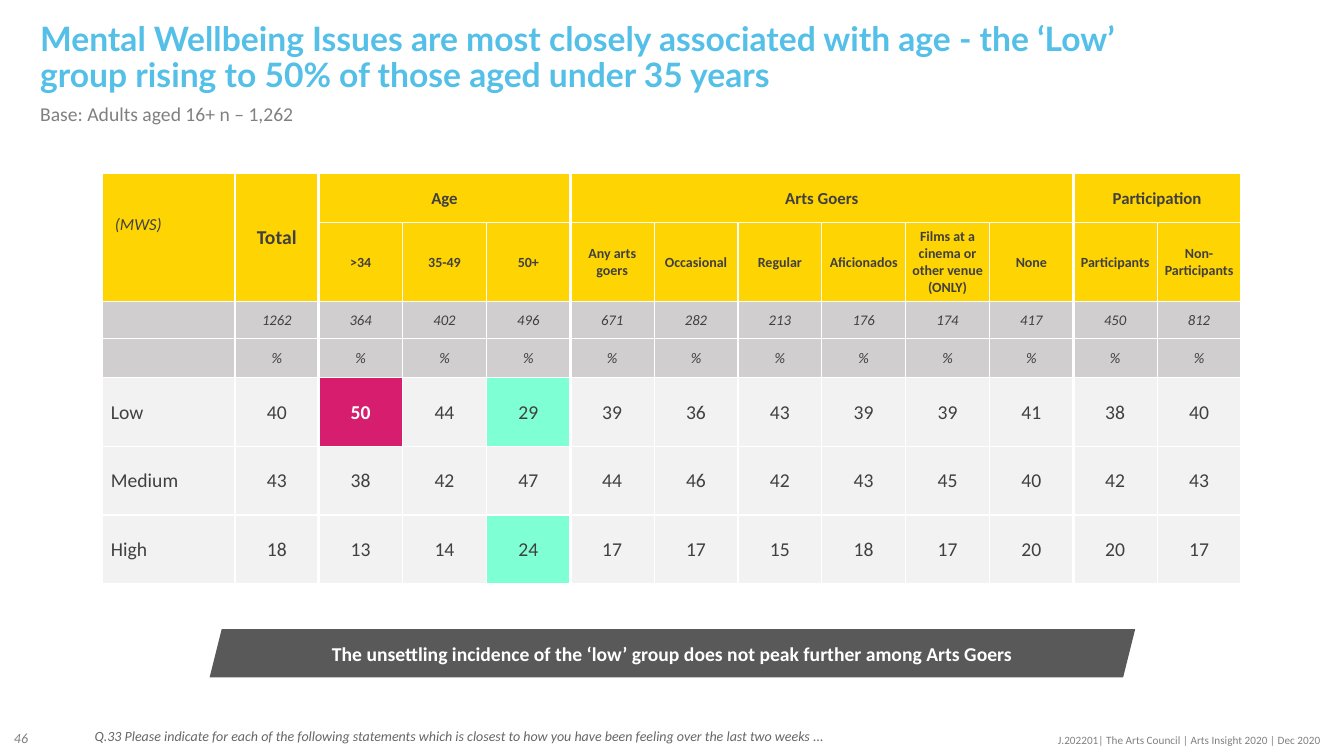
from dataclasses import dataclass, replace
from typing import NamedTuple

from lxml import etree
from pptx import Presentation
from pptx import util as u
from pptx.dml.color import RGBColor
from pptx.enum import shapes, text
from pptx.oxml import ns

SLIDE_WIDTH, SLIDE_HEIGHT = u.Inches(13.33), u.Inches(7.5)

WHITE = RGBColor(0xFF, 0xFF, 0xFF)
SKY = RGBColor(0x54, 0xC0, 0xE8)
GREY = RGBColor(0x80, 0x80, 0x80)
QUESTION_GREY = RGBColor(0x66, 0x66, 0x66)
BANNER_GREY = RGBColor(0x59, 0x59, 0x59)
INK = RGBColor(0x40, 0x40, 0x40)
YELLOW = RGBColor(0xFE, 0xD4, 0x02)
BASE_GREY = RGBColor(0xD0, 0xCE, 0xCE)
PALE = RGBColor(0xF2, 0xF2, 0xF2)
PINK = RGBColor(0xD6, 0x1D, 0x6E)
MINT = RGBColor(0x7F, 0xFF, 0xD4)

LEFT, CENTRE, RIGHT = text.PP_ALIGN.LEFT, text.PP_ALIGN.CENTER, text.PP_ALIGN.RIGHT
TOP, MIDDLE = text.MSO_ANCHOR.TOP, text.MSO_ANCHOR.MIDDLE


def across(percent: float) -> int:
    return round(SLIDE_WIDTH * percent / 100)


def down(percent: float) -> int:
    return round(SLIDE_HEIGHT * percent / 100)


class Area(NamedTuple):
    """A rectangle in percent of the slide's width and height."""
    left: float
    top: float
    width: float
    height: float

    def emu(self) -> tuple[int, int, int, int]:
        return across(self.left), down(self.top), across(self.width), down(self.height)


@dataclass(frozen=True)
class Style:
    size: float
    color: RGBColor = INK
    bold: bool = False
    italic: bool = False
    name: str = "Calibri"
    align: text.PP_ALIGN = LEFT
    line_spacing: float = 1.0


@dataclass(frozen=True)
class Caption:
    wording: str
    area: Area
    style: Style
    anchor: text.MSO_ANCHOR = TOP


@dataclass(frozen=True)
class Band:
    """One table row: height in percent of the slide, fill and lettering."""
    height: float
    fill: RGBColor
    style: Style
    cells: tuple[str, ...]


CAPTIONS = [
    Caption("46", Area(0.3, 94.93, 4.35, 5.33), Style(10, GREY, italic=True), MIDDLE),
    Caption("J.202201| The Arts Council | Arts Insight 2020 | Dec 2020",
            Area(77.27, 96.4, 21.76, 4.93), Style(8, GREY, align=RIGHT)),
    Caption("Base: Adults aged 16+ n – 1,262", Area(2.25, 13.2, 47.79, 4.67),
            Style(14, GREY, line_spacing=0.9)),
    Caption("Mental Wellbeing Issues are most closely associated with age - the ‘Low’ "
            "group rising to 50% of those aged under 35 years",
            Area(2.25, 2.27, 85.67, 5.47),
            Style(24, SKY, bold=True, name="Lato", line_spacing=0.9)),
    Caption("Q.33 Please indicate for each of the following statements which is closest "
            "to how you have been feeling over the last two weeks ...",
            Area(6.3, 95.87, 57.76, 4.13),
            Style(10, QUESTION_GREY, italic=True, line_spacing=0.9)),
]
BANNER = Caption("The unsettling incidence of the ‘low’ group does not peak further among Arts Goers",
                 Area(15.6, 83.2, 68.87, 6.4), Style(14, WHITE, bold=True, align=CENTRE), MIDDLE)

GROUP = Style(12, bold=True, align=CENTRE)
SEGMENT = replace(GROUP, size=10)
SAMPLE = Style(10.5, italic=True, align=CENTRE)
SCORE = Style(14, align=CENTRE)

BANDS = [
    Band(6.53, YELLOW, GROUP, ("(MWS)", "Total", "Age", "", "", "Arts Goers", "", "", "", "", "",
                               "Participation", "")),
    Band(10.4, YELLOW, SEGMENT, ("", "", ">34", "35-49", "50+", "Any arts goers", "Occasional",
                                 "Regular", "Aficionados",
                                 "Films at a cinema or other venue (ONLY)", "None",
                                 "Participants", "Non-Participants")),
    Band(4.93, BASE_GREY, SAMPLE, ("", "1262", "364", "402", "496", "671", "282", "213", "176",
                                   "174", "417", "450", "812")),
    Band(5.2, BASE_GREY, SAMPLE, ("",) + ("%",) * 12),
    Band(9.07, PALE, SCORE, ("Low", "40", "50", "44", "29", "39", "36", "43", "39", "39", "41",
                             "38", "40")),
    Band(9.07, PALE, SCORE, ("Medium", "43", "38", "42", "47", "44", "46", "42", "43", "45", "40",
                             "42", "43")),
    Band(9.07, PALE, SCORE, ("High", "18", "13", "14", "24", "17", "17", "15", "18", "17", "20",
                             "20", "17")),
]
TABLE_AREA = Area(7.65, 22.93, 84.7, 54.13)
LABEL_WIDTH = 9.83
MERGES = [((0, 0), (1, 0)), ((0, 1), (1, 1)), ((0, 2), (0, 4)), ((0, 5), (0, 10)),
          ((0, 11), (0, 12))]
GROUP_ENDS = {0, 1, 4, 10}
HIGHLIGHTS = {(4, 2): PINK, (4, 4): MINT, (6, 4): MINT}
SPECIAL_STYLES = {
    (0, 0): Style(12, italic=True),
    (0, 1): replace(GROUP, size=14),
    (4, 2): replace(SCORE, color=WHITE, bold=True),
}


def write(frame, wording: str, style: Style) -> None:
    paragraph = frame.paragraphs[0]
    paragraph.alignment = style.align
    paragraph.line_spacing = style.line_spacing
    run = paragraph.add_run()
    run.text = wording
    lettering = {"name": style.name, "size": u.Pt(style.size),
                 "bold": style.bold, "italic": style.italic}
    for attribute, value in lettering.items():
        setattr(run.font, attribute, value)
    run.font.color.rgb = style.color


def add_caption(slide, caption: Caption) -> None:
    frame = slide.shapes.add_textbox(*caption.area.emu()).text_frame
    frame.word_wrap = True
    frame.vertical_anchor = caption.anchor
    write(frame, caption.wording, caption.style)


def add_banner(slide, banner: Caption) -> None:
    ribbon = slide.shapes.add_shape(shapes.MSO_SHAPE.PARALLELOGRAM, *banner.area.emu())
    ribbon.shadow.inherit = False
    ribbon.fill.solid()
    ribbon.fill.fore_color.rgb = BANNER_GREY
    ribbon.line.fill.background()
    frame = ribbon.text_frame
    layout = {"margin_left": 0, "margin_right": 0, "margin_top": 0, "margin_bottom": 0,
              "vertical_anchor": banner.anchor, "word_wrap": True}
    for attribute, value in layout.items():
        setattr(frame, attribute, value)
    write(frame, banner.wording, banner.style)


def rule_cell(cell, widths: dict[str, float]) -> None:
    """Draw white borders; widths maps L, R, T, B to points, in that order."""
    properties = cell._tc.get_or_add_tcPr()
    for position, (side, width) in enumerate(widths.items()):
        line = etree.Element(ns.qn(f"a:ln{side}"), w=str(u.Pt(width)))
        solid = etree.SubElement(line, ns.qn("a:solidFill"))
        etree.SubElement(solid, ns.qn("a:srgbClr"), val=str(WHITE))
        properties.insert(position, line)


def fill_cell(cell, row: int, column: int, band: Band) -> None:
    corner, label = (row, column) == (0, 0), column == 0
    layout = {"margin_left": u.Inches(0.12 if corner else 0.08 if label else 0.01),
              "margin_top": u.Inches(0.41 if corner else 0.01),
              "margin_right": u.Inches(0.01), "margin_bottom": 0,
              "vertical_anchor": TOP if corner else MIDDLE}
    for attribute, value in layout.items():
        setattr(cell, attribute, value)
    cell.fill.solid()
    cell.fill.fore_color.rgb = HIGHLIGHTS.get((row, column), band.fill)
    last = column + (cell.span_width - 1 if cell.is_merge_origin else 0)
    rule_cell(cell, {"L": 2.25 if column - 1 in GROUP_ENDS else 1,
                     "R": 2.25 if last in GROUP_ENDS else 1, "T": 1, "B": 1})
    if band.cells[column]:
        style = SPECIAL_STYLES.get((row, column), band.style)
        write(cell.text_frame, band.cells[column], replace(style, align=LEFT) if label else style)


def add_wellbeing_table(slide) -> None:
    segments = len(BANDS[0].cells) - 1
    table = slide.shapes.add_table(len(BANDS), segments + 1, *TABLE_AREA.emu()).table
    table.first_row = table.horz_banding = False
    for index, column in enumerate(table.columns):
        column.width = across((TABLE_AREA.width - LABEL_WIDTH) / segments if index else LABEL_WIDTH)
    for start, end in MERGES:
        table.cell(*start).merge(table.cell(*end))
    for row, band in enumerate(BANDS):
        table.rows[row].height = down(band.height)
        for column in range(segments + 1):
            fill_cell(table.cell(row, column), row, column, band)


def main() -> None:
    deck = Presentation()
    deck.slide_width, deck.slide_height = SLIDE_WIDTH, SLIDE_HEIGHT
    slide = deck.slides.add_slide(deck.slide_layouts[6])
    for caption in CAPTIONS:
        add_caption(slide, caption)
    add_banner(slide, BANNER)
    add_wellbeing_table(slide)
    deck.save("out.pptx")


if __name__ == "__main__":
    main()
